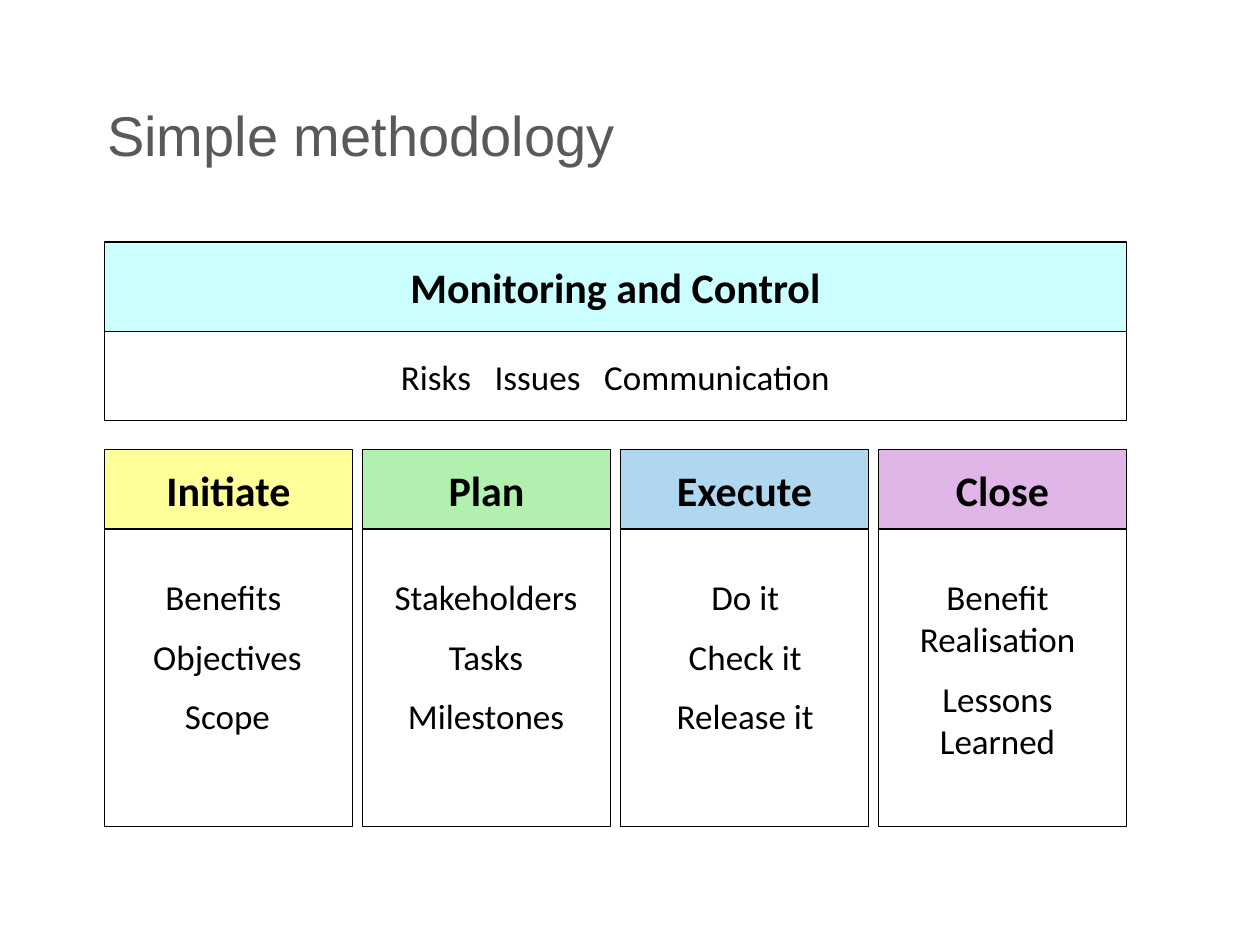
from pptx import Presentation
from pptx import util as u
from pptx.dml.color import RGBColor
from pptx.enum import shapes, text

HEAD = dict(name="Calibri", size=u.Pt(24), bold=True)
BODY = dict(name="Calibri", size=u.Pt(20), bold=False)
TITLE = dict(name="Arial", size=u.Pt(32), bold=False)
GAP = 0.08
STAGES = [
    ("Initiate", "FFFF99", ["Benefits ", "Objectives", "Scope"], (0.15, 1.65, 1.93)),
    ("Plan", "B1F0AE", ["Stakeholders", "Tasks", "Milestones"], (-0.16, 2.28, 1.43)),
    ("Execute", "AFD7EF", ["Do it", "Check it", "Release it"], (-0.23, 2.44, 1.43)),
    ("Close", "E0B6E8", ["Benefit Realisation", "Lessons Learned"], (0.08, 1.73, 1.6)),
]


def inches(*box):
    return [u.Inches(n) for n in box]


def paint(part, tone):
    part.rgb = RGBColor.from_string(tone)


def style(para, look, tone="000000", align=text.PP_ALIGN.CENTER):
    para.alignment = align
    for key, value in look.items():
        setattr(para.font, key, value)
    paint(para.font.color, tone)


def panel(slide, box, words="", look=BODY, tone=None):
    rect = slide.shapes.add_shape(shapes.MSO_SHAPE.RECTANGLE, *inches(*box))
    rect.shadow.inherit = False
    if tone:
        rect.fill.solid()
        paint(rect.fill.fore_color, tone)
    else:
        rect.fill.background()
    paint(rect.line.color, "000000")
    rect.line.width = u.Pt(0.75)
    if words:
        frame = rect.text_frame
        frame.word_wrap = False
        frame.vertical_anchor = text.MSO_ANCHOR.MIDDLE
        frame.text = words
        style(frame.paragraphs[0], look)


def items(slide, box, lines):
    frame = slide.shapes.add_textbox(*inches(*box)).text_frame
    frame.word_wrap = True
    frame.text = "\n".join(lines)
    for rank, para in enumerate(frame.paragraphs):
        style(para, BODY)
        if rank:
            para.space_before = u.Pt(10)


def heading(slide, box, words):
    title = slide.shapes.title
    spots = zip(("left", "top", "width", "height"), inches(*box))
    for key, value in spots:
        setattr(title, key, value)
    frame = title.text_frame
    frame.text = words
    frame.vertical_anchor = text.MSO_ANCHOR.TOP
    style(frame.paragraphs[0], TITLE, "595959", text.PP_ALIGN.LEFT)


def control(slide, box):
    left, top, width, height = box
    half = height / 2
    panel(slide, (left, top, width, half), "Monitoring and Control", HEAD, "CCFFFF")
    panel(slide, (left, top + half, width, half), "Risks   Issues   Communication")


def stage(slide, box, name, tone, lines, place):
    left, top, width, height = box
    cap = 0.63
    shift, wide, tall = place
    panel(slide, (left, top, width, cap), name, HEAD, tone)
    panel(slide, (left, top + cap, width, height - cap))
    items(slide, (left + shift, top + 0.95, wide, tall), lines)


def stages(slide, box):
    left, top, width, height = box
    step = (width + GAP) / len(STAGES)
    for rank, parts in enumerate(STAGES):
        stage(slide, (left + rank * step, top, step - GAP, height), *parts)


def main():
    deck = Presentation()
    deck.slide_width, deck.slide_height = inches(10, 7.5)
    slide = deck.slides.add_slide(deck.slide_layouts[5])
    heading(slide, (0.75, 0.75, 8.17, 1.67), "Simple methodology")
    control(slide, (0.83, 1.92, 8.11, 1.42))
    stages(slide, (0.83, 3.57, 8.11, 2.99))
    deck.save("out.pptx")


if __name__ == "__main__":
    main()
